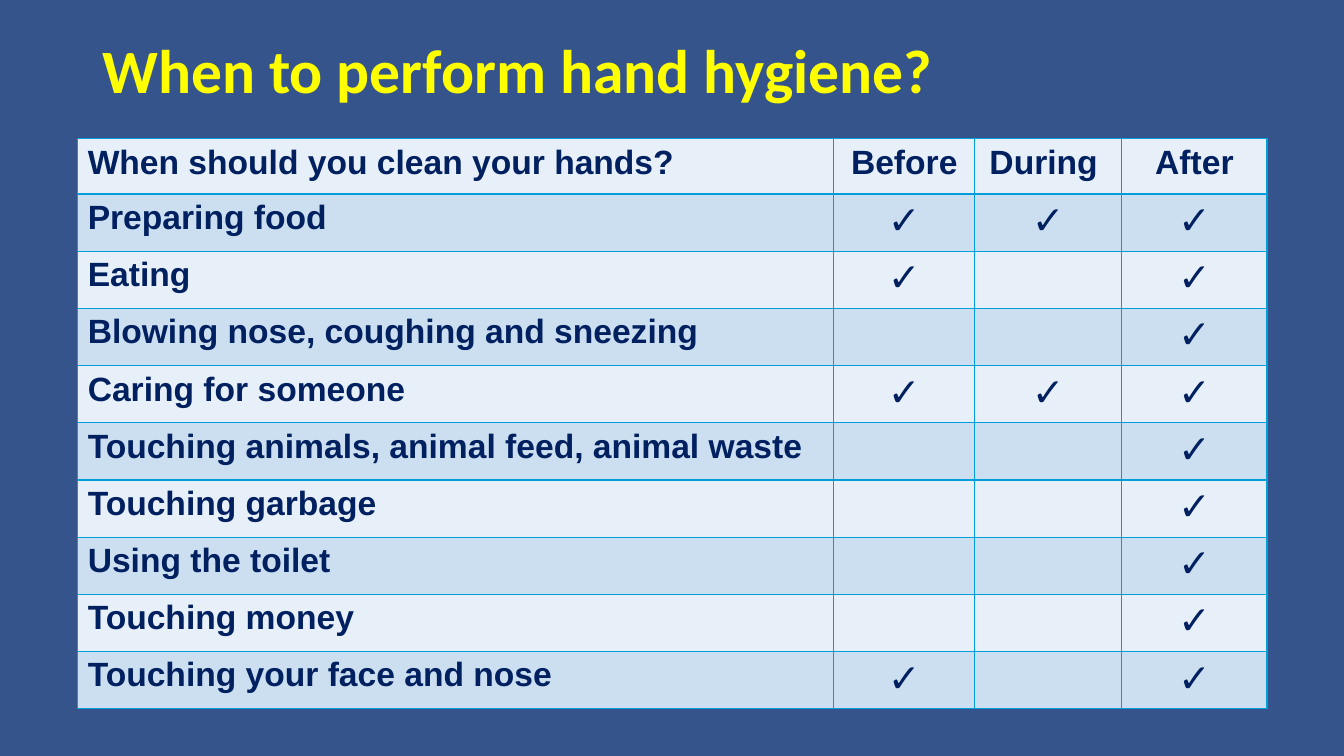
from pptx import Presentation
from pptx.dml.color import RGBColor
from pptx.enum.text import MSO_ANCHOR, PP_ALIGN
from pptx.oxml import parse_xml
from pptx.oxml.ns import nsdecls
from pptx.util import Inches, Pt

BACKGROUND = RGBColor(0x36, 0x54, 0x8C)
YELLOW = RGBColor(0xFF, 0xFF, 0x00)
NAVY = RGBColor(0x00, 0x20, 0x60)
PALE = RGBColor(0xE7, 0xEF, 0xF8)
LIGHT_BLUE = RGBColor(0xCC, 0xDF, 0xF1)
CYAN = RGBColor(0x00, 0x9D, 0xD9)

GRID_COLUMNS, GRID_ROWS = 160, 90
MOMENTS = ["Before", "During ", "After"]
SITUATIONS = [
    ("Preparing food", "Before During After"),
    ("Eating", "Before After"),
    ("Blowing nose, coughing and sneezing", "After"),
    ("Caring for someone", "Before During After"),
    ("Touching animals, animal feed, animal waste", "After"),
    ("Touching garbage", "After"),
    ("Using the toilet", "After"),
    ("Touching money", "After"),
    ("Touching your face and nose", "Before After"),
]


class HygieneSlide:
    """Holds the style and the slide, measured on a grid of 160 by 90."""

    def __init__(self, deck):
        self.column = deck.slide_width / GRID_COLUMNS
        self.row = deck.slide_height / GRID_ROWS
        self.slide = deck.slides.add_slide(deck.slide_layouts[6])
        self.slide.background.fill.solid()
        self.slide.background.fill.fore_color.rgb = BACKGROUND

    def place(self, left, top, width, height):
        return (round(left * self.column), round(top * self.row),
                round(width * self.column), round(height * self.row))

    def style_text(self, paragraph, text, font, size, color):
        paragraph.text = text
        paragraph.font.name = font
        paragraph.font.size = Pt(size)
        paragraph.font.bold = True
        paragraph.font.color.rgb = color

    def title(self, text, *area):
        frame = self.slide.shapes.add_textbox(*self.place(*area)).text_frame
        frame.word_wrap = True
        frame.vertical_anchor = MSO_ANCHOR.MIDDLE
        heading = frame.paragraphs[0]
        heading.line_spacing = 0.9
        self.style_text(heading, text, "Calibri", 44, YELLOW)

    def border(self, cell):
        properties = cell._tc.get_or_add_tcPr()
        for side in "LRTB":
            properties.append(parse_xml(
                f'<a:ln{side} {nsdecls("a")} w="12700"><a:solidFill>'
                f'<a:srgbClr val="{CYAN}"/></a:solidFill></a:ln{side}>'))

    def table(self, lines, left, top, widths, row_height):
        area = self.place(left, top, sum(widths), row_height * len(lines))
        table = self.slide.shapes.add_table(len(lines), len(widths), *area).table
        for column, width in zip(table.columns, widths):
            column.width = round(width * self.column)
        for i, line in enumerate(lines):
            table.rows[i].height = round(row_height * self.row)
            for j, text in enumerate(line):
                cell = table.cell(i, j)
                self.border(cell)
                cell.fill.solid()
                cell.fill.fore_color.rgb = LIGHT_BLUE if i % 2 else PALE
                paragraph = cell.text_frame.paragraphs[0]
                if j:
                    paragraph.alignment = PP_ALIGN.CENTER
                if text:
                    size = 28 if text == "✓" else 24
                    self.style_text(paragraph, text, "Arial", size, NAVY)


def main():
    deck = Presentation()
    deck.slide_width, deck.slide_height = Inches(13.33), Inches(7.5)
    hygiene = HygieneSlide(deck)
    hygiene.title("When to perform hand hygiene?", 11, 0, 138, 17.4)
    lines = [["When should you clean your hands?", *MOMENTS]]
    for situation, times in SITUATIONS:
        ticks = ["✓" if moment.strip() in times else "" for moment in MOMENTS]
        lines.append([situation, *ticks])
    hygiene.table(lines, 9.25, 16.5, [90, 16.8, 17.5, 17.3], 6.6)
    deck.save("out.pptx")


if __name__ == "__main__":
    main()
